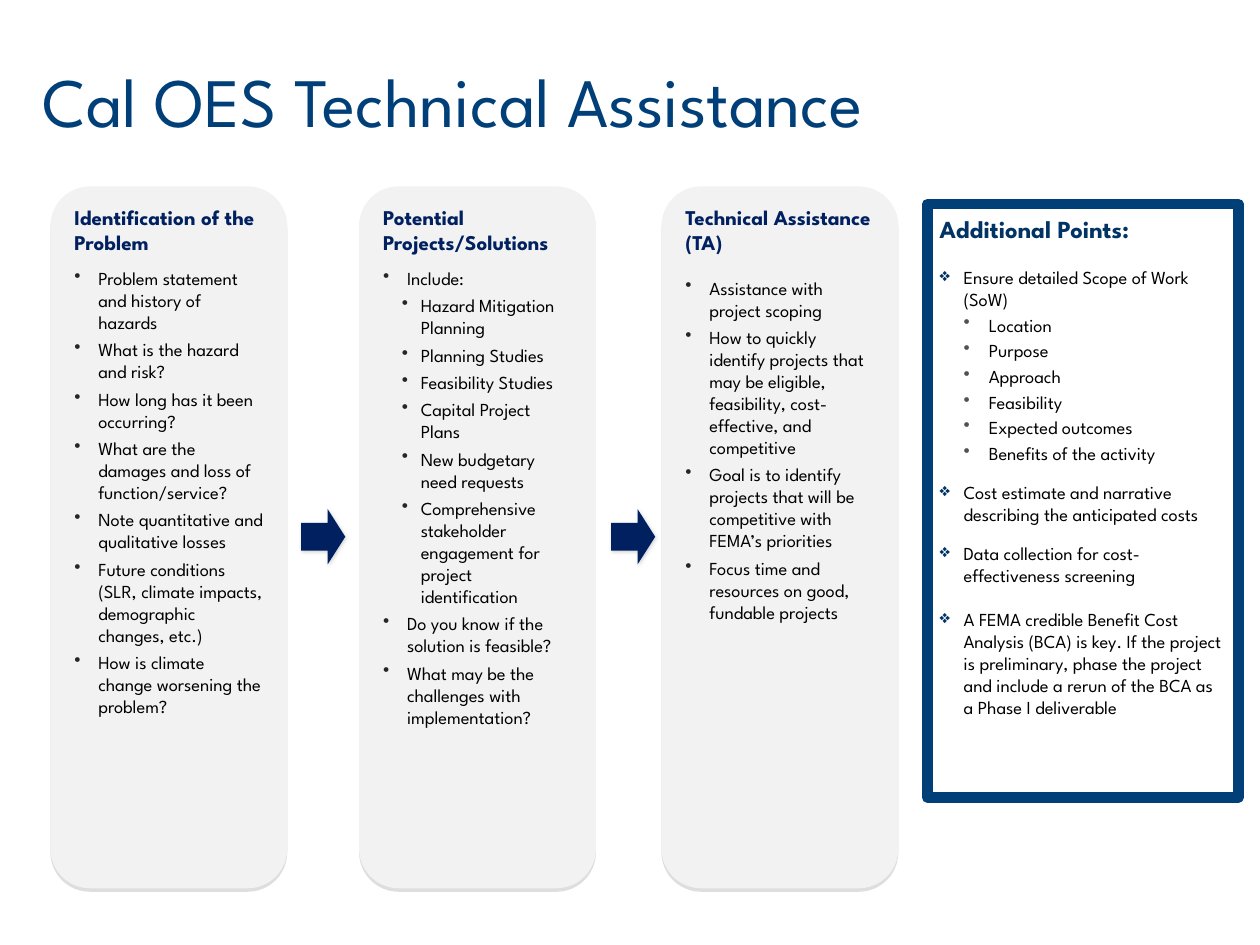
from lxml import etree
from pptx import Presentation
from pptx.dml.color import RGBColor
from pptx.enum.shapes import MSO_SHAPE
from pptx.enum.text import MSO_ANCHOR, PP_ALIGN
from pptx.oxml import parse_xml
from pptx.oxml.ns import nsdecls, qn
from pptx.util import Pt

PX = 9144  # EMU per px, 100 px to the inch
FONT = "League Spartan"
BLUE = RGBColor(0x00, 0x3F, 0x78)
NAVY = RGBColor(0x00, 0x20, 0x60)
DEEP_BLUE = RGBColor(0x01, 0x33, 0x65)
GRAY = RGBColor(0xF2, 0xF2, 0xF2)
BLACK = RGBColor(0x00, 0x00, 0x00)
ROUNDED, ARROW, RECTANGLE = (MSO_SHAPE.ROUNDED_RECTANGLE, MSO_SHAPE.RIGHT_ARROW,
                             MSO_SHAPE.RECTANGLE)
LEFT, TOP, MIDDLE = PP_ALIGN.LEFT, MSO_ANCHOR.TOP, MSO_ANCHOR.MIDDLE

# Paragraph formats: bullet is (character, colour, left margin px, hanging px)
PANEL_HEADING = {"size": 12, "color": NAVY, "bold": True}
POINT = {"bullet": ("•", "252625", 19, 19), "space_after": 3}
SUBPOINT = {"bullet": ("•", "252625", 30, 15), "space_after": 3}
BOX_HEADING = {"size": 14, "color": DEEP_BLUE, "bold": True,
               "line_spacing": 1.14, "space_after": 12.6}
DIAMOND = {"bullet": ("❖", "003364", 19, 19)}
DETAIL = {"bullet": ("•", "505150", 39, 20), "space_before": 2.1}


def write(frame, items):
    """Fill a text frame with (text, format) paragraphs."""
    frame.word_wrap = True
    for index, (text, style) in enumerate(items):
        paragraph = frame.paragraphs[0] if index == 0 else frame.add_paragraph()
        paragraph.alignment = LEFT
        for name in ("space_before", "space_after"):
            setattr(paragraph, name, Pt(style.get(name, 0)))
        if "line_spacing" in style:
            paragraph.line_spacing = style["line_spacing"]
        if "bullet" in style:
            character, color, margin, hanging = style["bullet"]
            properties = paragraph._p.get_or_add_pPr()
            properties.set("marL", str(margin * PX))
            properties.set("indent", str(-hanging * PX))
            bullet_color = etree.SubElement(properties, qn("a:buClr"))
            etree.SubElement(bullet_color, qn("a:srgbClr")).set("val", color)
            etree.SubElement(properties, qn("a:buChar")).set("char", character)
        run = paragraph.add_run()
        run.text = text
        run.font.name = FONT
        run.font.size = Pt(style.get("size", 10.5))
        run.font.bold = style.get("bold", False)
        run.font.color.rgb = style.get("color", BLACK)


def add_filled(kind, box, fill, shadow):
    """Add a borderless shape; shadow is (colour, alpha %, blur pt, distance pt, degrees)."""
    shape = slide.shapes.add_shape(kind, *(value * PX for value in box))
    shape.fill.solid()
    shape.fill.fore_color.rgb = fill
    shape.line.fill.background()
    color, alpha, blur, distance, angle = shadow
    shape._element.spPr.append(parse_xml(
        f'<a:effectLst {nsdecls("a")}><a:outerShdw blurRad="{blur * 12700}" '
        f'dist="{distance * 12700}" dir="{angle * 60000}" algn="ctr" rotWithShape="0">'
        f'<a:srgbClr val="{color}"><a:alpha val="{alpha * 1000}"/></a:srgbClr>'
        '</a:outerShdw></a:effectLst>'))
    return shape


presentation = Presentation()
presentation.slide_width = 1000 * PX
presentation.slide_height = 750 * PX
slide = presentation.slides.add_slide(presentation.slide_layouts[6])

# Title
title = slide.shapes.add_textbox(24 * PX, 21 * PX, 833 * PX, 117 * PX)
title.text_frame.vertical_anchor = MIDDLE
write(title.text_frame, [("Cal OES Technical Assistance", {"size": 39.6, "color": BLUE})])

# Process panels: left, heading, gap below the heading in pt, points
panels = [
    (40, "Identification of the Problem", 7.2, [
        ("Problem statement and history of hazards", POINT),
        ("What is the hazard and risk?", POINT),
        ("How long has it been occurring?", POINT),
        ("What are the damages and loss of function/service?", POINT),
        ("Note quantitative and qualitative losses", POINT),
        ("Future conditions (SLR, climate impacts, demographic changes, etc.)", POINT),
        ("How is climate change worsening the problem?", POINT),
    ]),
    (285, "Potential Projects/Solutions", 7.2, [
        ("Include:", POINT),
        ("Hazard Mitigation Planning", SUBPOINT),
        ("Planning Studies", SUBPOINT),
        ("Feasibility Studies", SUBPOINT),
        ("Capital Project Plans", SUBPOINT),
        ("New budgetary need requests", SUBPOINT),
        ("Comprehensive stakeholder engagement for project identification", SUBPOINT),
        ("Do you know if the solution is feasible?", POINT),
        ("What may be the challenges with implementation?", POINT),
    ]),
    (525, "Technical Assistance (TA)", 12.6, [
        ("Assistance with project scoping", POINT),
        ("How to quickly identify projects that may be eligible, feasibility, "
         "cost-effective, and competitive", POINT),
        ("Goal is to identify projects that will be competitive with FEMA’s priorities", POINT),
        ("Focus time and resources on good, fundable projects", POINT),
    ]),
]
for left, heading, gap, points in panels:
    panel = add_filled(ROUNDED, (left, 148, 188, 557), GRAY, ("404040", 17, 0, 2, 90))
    panel.text_frame.vertical_anchor = TOP
    write(panel.text_frame, [(heading, PANEL_HEADING | {"space_after": gap})] + points)

# Arrows between the panels
for left in (239, 485):
    arrow = add_filled(ARROW, (left, 404, 35, 44), NAVY, ("595959", 25, 2, 1, 45))
    arrow.adjustments[1] = 0.4

# Additional points box
box = slide.shapes.add_shape(RECTANGLE, 736 * PX, 162 * PX, 247 * PX, 471 * PX)
box.shadow.inherit = False
box.fill.background()
box.line.color.rgb = BLUE
box.line.width = Pt(6)
box.text_frame.vertical_anchor = TOP
details = ["Location", "Purpose", "Approach", "Feasibility", "Expected outcomes",
           "Benefits of the activity"]
write(box.text_frame, [
    ("Additional Points:", BOX_HEADING),
    ("Ensure detailed Scope of Work (SoW)", DIAMOND),
    *((detail, DETAIL) for detail in details),
    ("Cost estimate and narrative describing the anticipated costs",
     DIAMOND | {"space_before": 9.6}),
    ("Data collection for cost-effectiveness screening", DIAMOND | {"space_before": 9.6}),
    ("A FEMA credible Benefit Cost Analysis (BCA) is key. If the project is preliminary, "
     "phase the project and include a rerun of the BCA as a Phase I deliverable",
     DIAMOND | {"space_before": 12.6}),
])

presentation.save("out.pptx")
